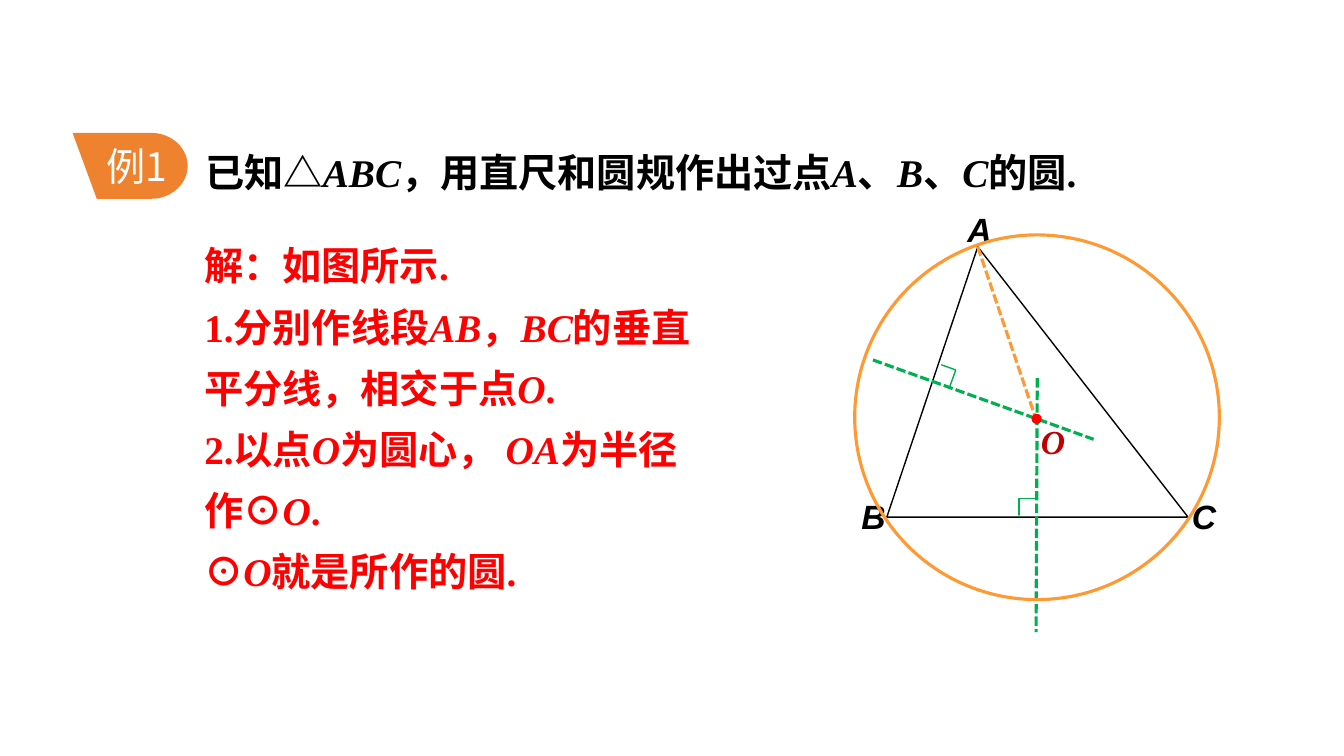
"""Builds the worked example on drawing the circle through A, B and C."""
import math

import pptx
import pptx.dml.color
import pptx.enum.dml
import pptx.enum.shapes
import pptx.enum.text
import pptx.util
from lxml import etree
from pptx.oxml.ns import qn

Cm, Pt = pptx.util.Cm, pptx.util.Pt
Preset = pptx.enum.shapes.MSO_SHAPE
COLORS = {"badge": "EE822F", "white": "FFFFFF", "black": "000000", "answer": "FF0000",
          "center": "C00000", "circle": "FF9933", "bisector": "00B050", "mark": "4874CB"}
CJK, SERIF = "Noto Sans CJK SC", "Times New Roman"


def write(paragraph, text, font, size, color, bold=True):
    """Add runs; pieces between asterisks are italic."""
    for index, piece in enumerate(text.split("*")):
        if piece:
            run = paragraph.add_run()
            run.text = piece
            run.font.size = Pt(size)
            run.font.bold = bold
            run.font.italic = index % 2 == 1
            run.font.color.rgb = pptx.dml.color.RGBColor.from_string(COLORS[color])
            run.font.name = CJK if piece in ("解", "⊙") else font
            east_asian = etree.SubElement(run.font._element, qn("a:ea"))
            east_asian.set("typeface", CJK)


def paint(shape, fill=None, line=None, width=1):
    """Set fill and outline, or switch them off, and drop the shadow."""
    shape.shadow.inherit = False
    if fill:
        shape.fill.solid()
        shape.fill.fore_color.rgb = pptx.dml.color.RGBColor.from_string(COLORS[fill])
    else:
        shape.fill.background()
    if line:
        shape.line.color.rgb = pptx.dml.color.RGBColor.from_string(COLORS[line])
        shape.line.width = Pt(width)
    else:
        shape.line.fill.background()


deck = pptx.Presentation()
deck.slide_width, deck.slide_height = Cm(33.87), Cm(19.05)
shapes = deck.slides.add_slide(deck.slide_layouts[6]).shapes

angles = [math.radians(degree) for degree in range(-90, 91, 5)]
round_end = [(Cm(3.81 + 0.92 * math.cos(a)), Cm(4.18 + 0.83 * math.sin(a))) for a in angles]
outline = shapes.build_freeform(Cm(1.83), Cm(3.35))
outline.add_line_segments(round_end + [(Cm(2.44), Cm(5.01))], close=True)
badge = outline.convert_to_shape()
paint(badge, fill="badge")
badge_text = badge.text_frame
badge_text.margin_left, badge_text.margin_right = Cm(0.66), Cm(0.33)
badge_text.margin_top = badge_text.margin_bottom = Cm(0.18)
badge_text.vertical_anchor = pptx.enum.text.MSO_ANCHOR.MIDDLE
badge_text.word_wrap = True
badge_text.paragraphs[0].alignment = pptx.enum.text.PP_ALIGN.CENTER
write(badge_text.paragraphs[0], "例1", CJK, 28, "white", bold=False)

question = shapes.add_textbox(Cm(4.85), Cm(2.97), Cm(26.75), Cm(1.9)).text_frame
question.word_wrap = True
question.margin_left = question.margin_right = Cm(0.33)
question.margin_top = question.margin_bottom = Cm(0.18)
question.paragraphs[0].line_spacing = 1.5
write(question.paragraphs[0], "已知△*ABC*，用直尺和圆规作出过点*A*、*B*、*C*的圆.", SERIF, 28, "black")

triangle = shapes.add_shape(Preset.ISOSCELES_TRIANGLE, Cm(22.35), Cm(6.22), Cm(7.59), Cm(6.81))
triangle.adjustments[0] = 0.302
paint(triangle, line="black")

for letter, left, top, font, color in [("A", 24.13, 5.13, "Arial", "black"),
                                       ("B", 21.46, 12.37, "Arial", "black"),
                                       ("C", 29.79, 12.37, "Arial", "black"),
                                       ("O", 25.98, 10.49, SERIF, "center")]:
    label = shapes.add_textbox(Cm(left), Cm(top), Cm(1.12), Cm(1.27)).text_frame
    label.word_wrap = letter == "O"
    write(label.paragraphs[0], f"*{letter}*", font, 24, color)

for x1, y1, x2, y2, color in [(26.14, 9.53, 26.11, 15.93, "bisector"),
                              (22, 9.07, 27.56, 11.07, "bisector"),
                              (24.64, 6.22, 26.11, 10.57, "circle")]:
    dashed = shapes.add_connector(pptx.enum.shapes.MSO_CONNECTOR.STRAIGHT,
                                  Cm(x1), Cm(y1), Cm(x2), Cm(y2))
    dashed.line.color.rgb = pptx.dml.color.RGBColor.from_string(COLORS[color])
    dashed.line.width = Pt(2.25)
    dashed.line.dash_style = pptx.enum.dml.MSO_LINE.SQUARE_DOT
    etree.SubElement(dashed._element.spPr, qn("a:effectLst"))

center = shapes.add_shape(Preset.OVAL, Cm(26.01), Cm(10.44), Cm(0.23), Cm(0.23))
paint(center, fill="answer", line="answer", width=0.75)
circle = shapes.add_shape(Preset.OVAL, Cm(21.54), Cm(5.92), Cm(9.19), Cm(9.19))
paint(circle, line="circle", width=2.25)

for left, top, width, height, turn in [(25.68, 12.57, 0.41, 0.41, 0),
                                       (23.62, 9.27, 0.43, 0.38, 109.7)]:
    right_angle = shapes.add_shape(Preset.HALF_FRAME, Cm(left), Cm(top), Cm(width), Cm(height))
    right_angle.adjustments[0] = right_angle.adjustments[1] = 0
    right_angle.rotation = turn
    paint(right_angle, fill="mark", line="bisector")

answer = shapes.add_textbox(Cm(4.9), Cm(5.61), Cm(15.8), Cm(9.42)).text_frame
answer.word_wrap = True
steps = ["解**：如图所示.",
         "1.分别作线段*AB*，*BC*的垂直",
         "平分线，相交于点*O*.",
         "2.以点*O*为圆心，* OA*为半径",
         "作**⊙*O*.",
         "⊙*O*就是所作的圆."]
for number, step in enumerate(steps):
    paragraph = answer.add_paragraph() if number else answer.paragraphs[0]
    paragraph.line_spacing = 1.3
    write(paragraph, step, SERIF, 28, "answer")

deck.save("out.pptx")
